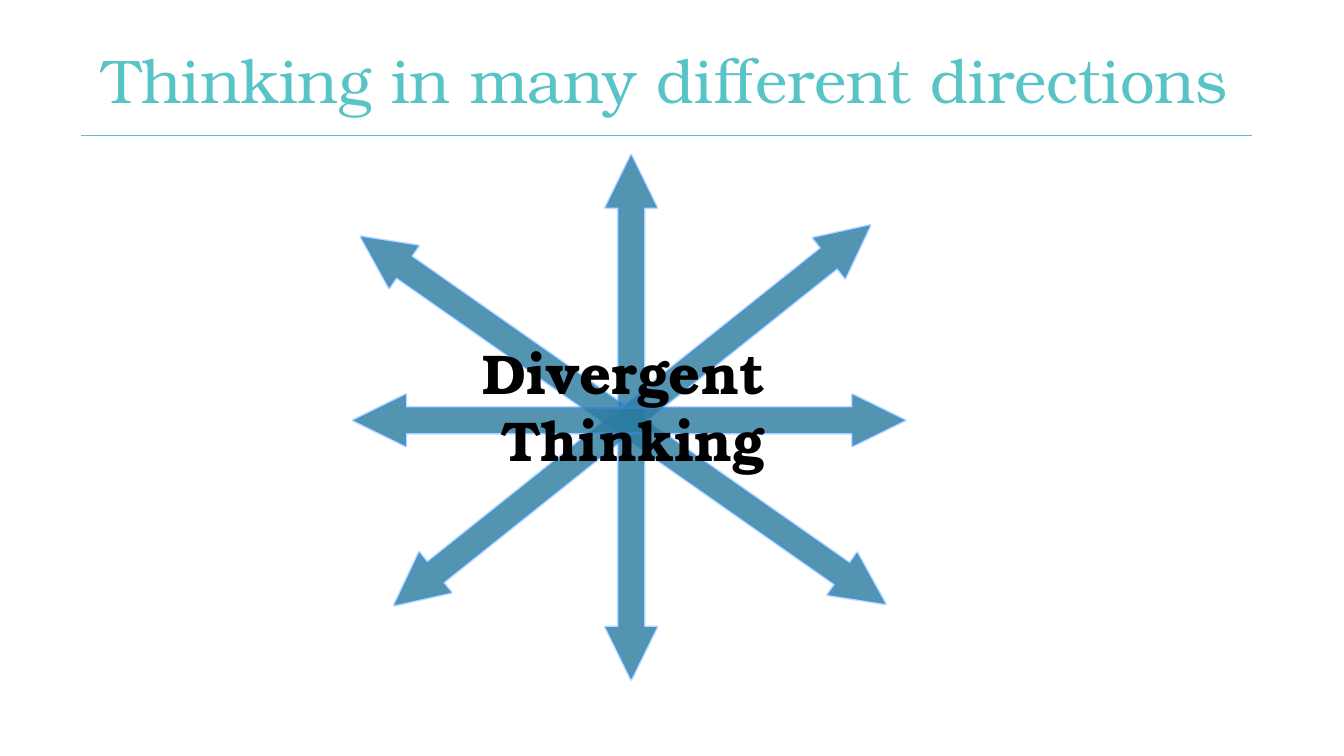
import dataclasses

import lxml.etree
import pptx
import pptx.dml.color
import pptx.enum.shapes
import pptx.enum.text
import pptx.oxml.ns
import pptx.presentation
import pptx.shapes.base
import pptx.slide
import pptx.text.text
import pptx.util

Inches = pptx.util.Inches
FONT = "TeX Gyre Bonum"
TEAL, ARROW_BLUE, EDGE_BLUE, BLACK = "59C4C7", "2C7C9F", "3A93FF", "000000"
ARROW_THICKNESS = 0.51


@dataclasses.dataclass(frozen=True)
class Arrow:
    center_x: float
    center_y: float
    length: float
    rotation: float


ARROWS = [
    Arrow(6.18, 4.17, 6.35, 215),
    Arrow(6.26, 4.14, 5.2, 270),
    Arrow(6.27, 4.12, 6.04, 141.4),
    Arrow(6.24, 4.17, 5.47, 0),
]


def rgb(value: str) -> pptx.dml.color.RGBColor:
    return pptx.dml.color.RGBColor.from_string(value)


def set_opacity(parent: lxml.etree._Element, percent: int) -> None:
    """Make the solid fill directly inside parent partly transparent."""
    color = parent.find(pptx.oxml.ns.qn("a:solidFill"))[0]
    alpha = lxml.etree.SubElement(color, pptx.oxml.ns.qn("a:alpha"))
    alpha.set("val", str(percent * 1000))


def place(shape: pptx.shapes.base.BaseShape, left: float, top: float,
          width: float, height: float) -> None:
    shape.left, shape.top = Inches(left), Inches(top)
    shape.width, shape.height = Inches(width), Inches(height)


def write_text(frame: pptx.text.text.TextFrame, lines: list[str], *, size: float,
               color: str, bold: bool = False,
               align: pptx.enum.text.PP_ALIGN = pptx.enum.text.PP_ALIGN.LEFT,
               anchor: pptx.enum.text.MSO_ANCHOR = pptx.enum.text.MSO_ANCHOR.MIDDLE,
               line_spacing: float = 1.0) -> None:
    frame.word_wrap = True
    frame.auto_size = pptx.enum.text.MSO_AUTO_SIZE.NONE
    frame.vertical_anchor = anchor
    for index, line in enumerate(lines):
        para = frame.add_paragraph() if index else frame.paragraphs[0]
        para.alignment = align
        para.line_spacing = line_spacing
        span = para.add_run()
        span.text = line
        span.font.name = FONT
        span.font.size = pptx.util.Pt(size)
        span.font.bold = bold
        span.font.color.rgb = rgb(color)


def add_title(page: pptx.slide.Slide) -> None:
    title = page.shapes.title
    place(title, 0.92, 0.1, 12.55, 1.45)
    write_text(title.text_frame, ["Thinking in many different directions"],
               size=44, color=TEAL, line_spacing=0.9)


def add_title_rule(page: pptx.slide.Slide) -> None:
    rule = page.shapes.add_connector(
        pptx.enum.shapes.MSO_CONNECTOR.STRAIGHT,
        Inches(0.8), Inches(1.34), Inches(12.42), Inches(1.34))
    rule.line.color.rgb = rgb(TEAL)
    rule.line.width = pptx.util.Pt(0.5)
    lxml.etree.SubElement(rule._element.spPr, pptx.oxml.ns.qn("a:effectLst"))


def add_arrow(page: pptx.slide.Slide, arrow: Arrow) -> None:
    shape = page.shapes.add_shape(
        pptx.enum.shapes.MSO_SHAPE.LEFT_RIGHT_ARROW,
        Inches(arrow.center_x - arrow.length / 2),
        Inches(arrow.center_y - ARROW_THICKNESS / 2),
        Inches(arrow.length), Inches(ARROW_THICKNESS))
    shape.rotation = arrow.rotation
    shape.adjustments[0] = 0.5
    shape.adjustments[1] = 1.02
    shape.shadow.inherit = False
    shape.fill.solid()
    shape.fill.fore_color.rgb = rgb(ARROW_BLUE)
    shape.line.color.rgb = rgb(EDGE_BLUE)
    shape.line.width = pptx.util.Pt(2)
    properties = shape._element.spPr
    set_opacity(properties, 81)
    set_opacity(properties.find(pptx.oxml.ns.qn("a:ln")), 34)


def add_center_label(page: pptx.slide.Slide) -> None:
    box = page.shapes.add_textbox(Inches(3.52), Inches(3.47), Inches(5.52), Inches(1.27))
    write_text(box.text_frame, ["Divergent ", "Thinking"], size=40, color=BLACK, bold=True,
               align=pptx.enum.text.PP_ALIGN.CENTER,
               anchor=pptx.enum.text.MSO_ANCHOR.BOTTOM)


def main() -> None:
    deck = pptx.Presentation()
    deck.slide_width, deck.slide_height = Inches(13.33), Inches(7.5)
    page = deck.slides.add_slide(deck.slide_layouts.get_by_name("Title Only"))
    add_title(page)
    add_title_rule(page)
    for arrow in ARROWS:
        add_arrow(page, arrow)
    add_center_label(page)
    deck.save("out.pptx")


if __name__ == "__main__":
    main()
